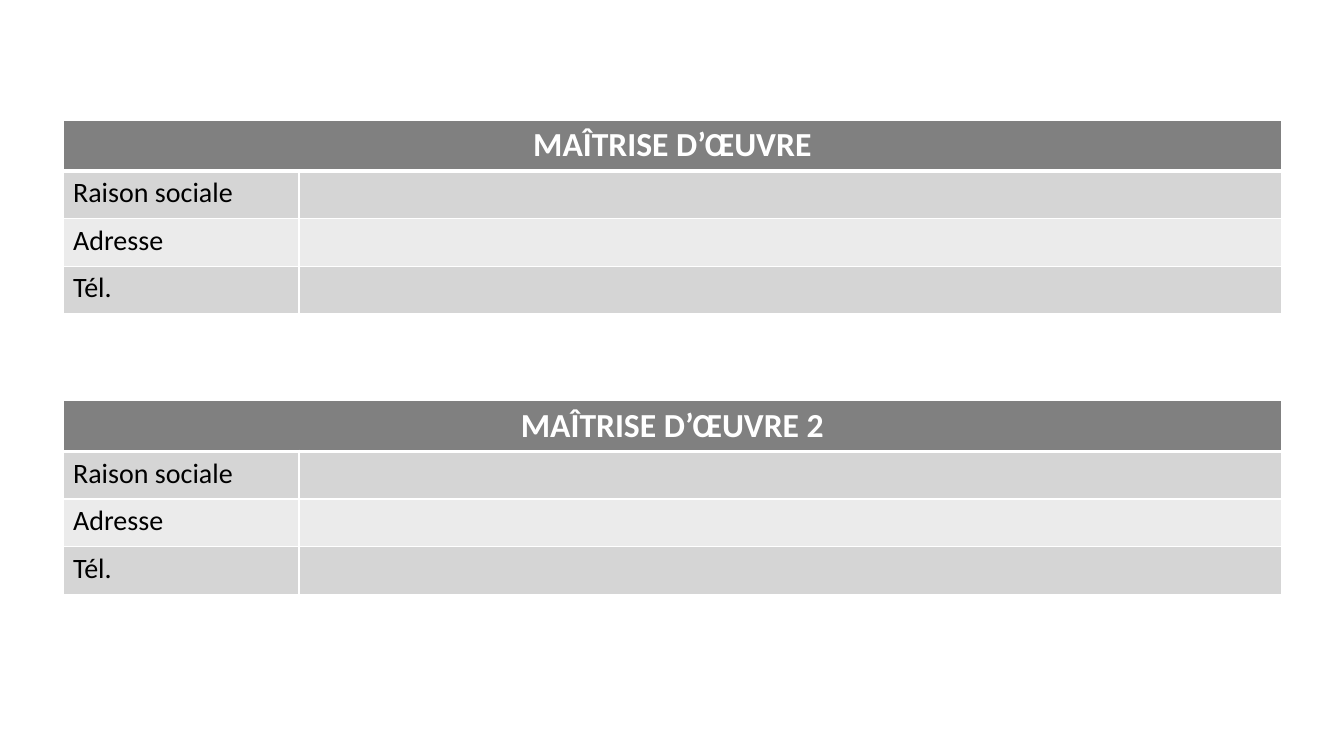
from dataclasses import dataclass

from lxml.etree import SubElement
from pptx import Presentation
from pptx.dml.color import RGBColor
from pptx.enum.text import PP_ALIGN
from pptx.oxml.ns import qn
from pptx.slide import Slide
from pptx.table import _Cell
from pptx.util import Pt

COLORS = {
    "white": "FFFFFF",
    "black": "000000",
    "header": "808080",
    "dark_band": "D5D5D5",
    "light_band": "EBEBEB",
}
FONT = "Calibri"
TABLE_LEFT = 45
COLUMN_WIDTHS = (168.5, 702)
ROW_HEIGHT = 34
THIN, THICK = 1, 3
FIELDS = ("Raison sociale", "Adresse", "Tél.")


@dataclass(frozen=True)
class ContactTable:
    title: str
    top: float


CONTACT_TABLES = (
    ContactTable("MAÎTRISE D’ŒUVRE", 85.7),
    ContactTable("MAÎTRISE D’ŒUVRE 2", 286),
)


def paint_cell(cell: _Cell, fill: str, top: float, bottom: float) -> None:
    """Give the cell white borders and a fill; borders must precede the fill."""
    properties = cell._tc.get_or_add_tcPr()
    borders = {"lnL": THIN, "lnR": THIN, "lnT": top, "lnB": bottom}
    for tag, width in borders.items():
        line = SubElement(properties, qn(f"a:{tag}"), w=str(Pt(width)))
        solid = SubElement(line, qn("a:solidFill"))
        SubElement(solid, qn("a:srgbClr"), val=COLORS["white"])
    cell.fill.solid()
    cell.fill.fore_color.rgb = RGBColor.from_string(COLORS[fill])


def write_cell(cell: _Cell, text: str, size: float, color: str, bold: bool) -> None:
    para = cell.text_frame.paragraphs[0]
    para.text = text
    for span in para.runs:
        span.font.name = FONT
        span.font.size = Pt(size)
        span.font.bold = bold
        span.font.color.rgb = RGBColor.from_string(COLORS[color])


def add_contact_table(page: Slide, contact: ContactTable) -> None:
    row_count = len(FIELDS) + 1
    frame = page.shapes.add_table(
        row_count, len(COLUMN_WIDTHS), Pt(TABLE_LEFT), Pt(contact.top),
        Pt(sum(COLUMN_WIDTHS)), Pt(ROW_HEIGHT * row_count),
    )
    table = frame.table
    for column, width in zip(table.columns, COLUMN_WIDTHS):
        column.width = Pt(width)

    for index, row in enumerate(table.rows):
        row.height = Pt(ROW_HEIGHT)
        band = "dark_band" if index % 2 else "light_band"
        for cell in row.cells:
            paint_cell(
                cell,
                fill=band if index else "header",
                top=THICK if index == 1 else THIN,
                bottom=THIN if index else THICK,
            )

    header = table.cell(0, 0)
    header.merge(table.cell(0, len(COLUMN_WIDTHS) - 1))
    write_cell(header, contact.title, 24, "white", bold=True)
    header.text_frame.paragraphs[0].alignment = PP_ALIGN.CENTER
    for index, field in enumerate(FIELDS, start=1):
        write_cell(table.cell(index, 0), field, 20, "black", bold=False)


def main() -> None:
    deck = Presentation()
    deck.slide_width, deck.slide_height = Pt(960), Pt(540)
    page = deck.slides.add_slide(deck.slide_layouts[6])
    for contact in CONTACT_TABLES:
        add_contact_table(page, contact)
    deck.save("out.pptx")


if __name__ == "__main__":
    main()
